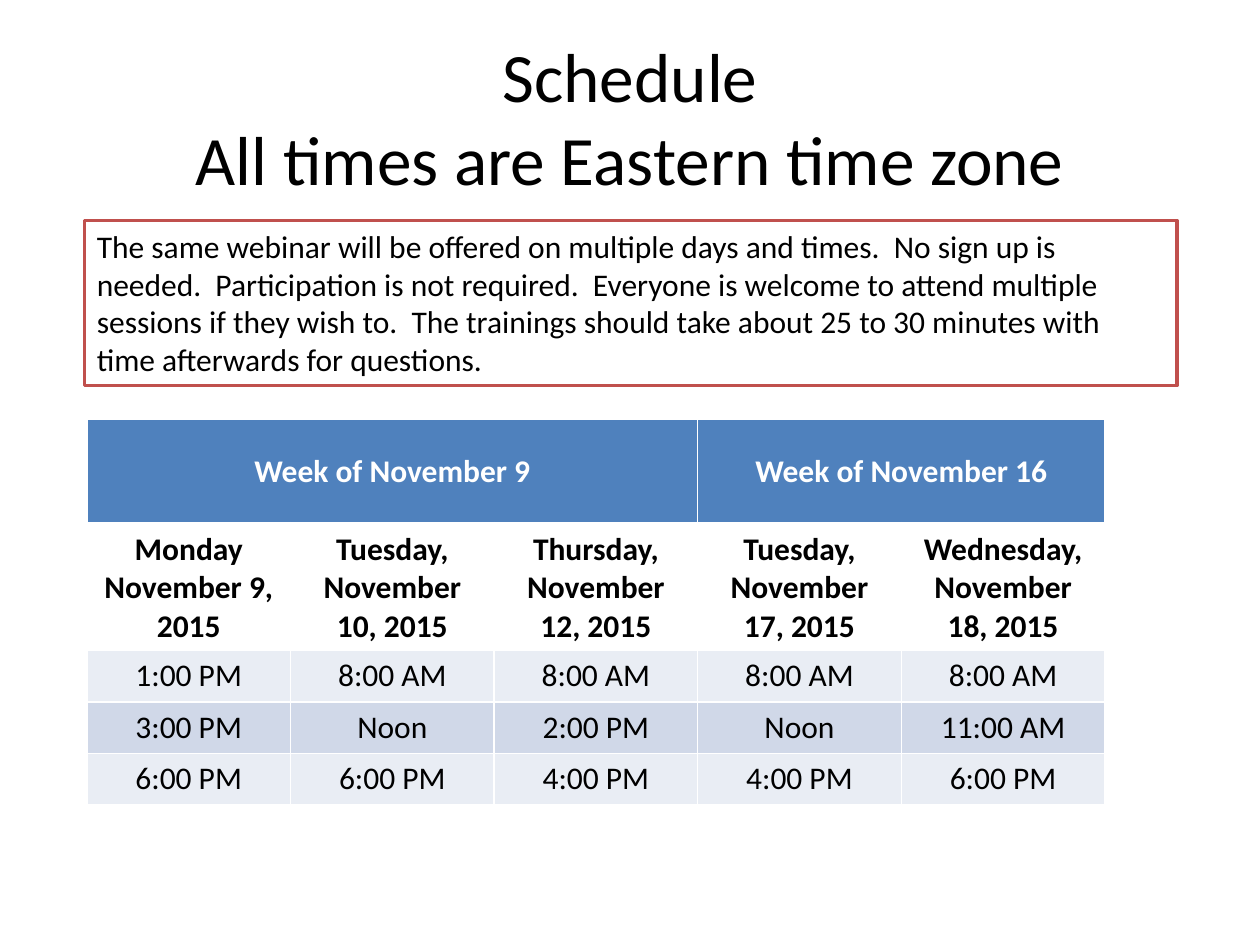
"""Build the training schedule slide."""
from pptx import Presentation
from pptx.dml.color import RGBColor
from pptx.enum.shapes import MSO_SHAPE
from pptx.enum.text import MSO_ANCHOR, PP_ALIGN
from pptx.oxml import parse_xml
from pptx.oxml.ns import nsdecls
from pptx.util import Inches, Pt

FONT = "Calibri"
BLACK, WHITE, BLUE, RED = "000000", "FFFFFF", "4F81BD", "C0504D"
BANDS = ["E9EDF4", "D0D8E8"]

TITLE = "Schedule\vAll times are Eastern time zone"
NOTICE = (
    "The same webinar will be offered on multiple days and times.  No sign up is needed.  "
    "Participation is not required.  Everyone is welcome to attend multiple sessions if "
    "they wish to.  The trainings should take about 25 to 30 minutes with time "
    "afterwards for questions."
)
WEEKS = [("Week of November 9", 3), ("Week of November 16", 2)]
DAYS = [
    "Monday\nNovember 9, 2015",
    "Tuesday,\nNovember 10, 2015",
    "Thursday,\nNovember 12, 2015",
    "Tuesday,\nNovember 17, 2015",
    "Wednesday, November 18, 2015",
]
TIMES = [
    ["1:00 PM", "8:00 AM", "8:00 AM", "8:00 AM", "8:00 AM"],
    ["3:00 PM", "Noon", "2:00 PM", "Noon", "11:00 AM"],
    ["6:00 PM", "6:00 PM", "4:00 PM", "4:00 PM", "6:00 PM"],
]
ROW_HEIGHTS = [0.83, 0.83, 0.41, 0.41, 0.41]


def rgb(value):
    return RGBColor.from_string(value)


def write(frame, text, size=18, color=BLACK, bold=False, align=PP_ALIGN.CENTER):
    frame.text = text
    frame.word_wrap = True
    for paragraph in frame.paragraphs:
        paragraph.alignment = align
        for run in paragraph.runs:
            run.font.name = FONT
            run.font.size = Pt(size)
            run.font.bold = bold
            run.font.color.rgb = rgb(color)


def style_cell(cell, fill=None, bottom=1):
    for side, width in (("L", 1), ("R", 1), ("T", 1), ("B", bottom)):
        cell._tc.get_or_add_tcPr().append(parse_xml(
            f'<a:ln{side} {nsdecls("a")} w="{Pt(width)}"><a:solidFill>'
            f'<a:srgbClr val="{WHITE}"/></a:solidFill></a:ln{side}>'))
    if fill:
        cell.fill.solid()
        cell.fill.fore_color.rgb = rgb(fill)
    else:
        cell.fill.background()


def add_title(slide):
    title = slide.shapes.add_textbox(Inches(0.5), Inches(0.3), Inches(9), Inches(1.25))
    write(title.text_frame, TITLE, size=39.6)
    title.text_frame.vertical_anchor = MSO_ANCHOR.MIDDLE


def add_notice(slide):
    notice = slide.shapes.add_shape(
        MSO_SHAPE.RECTANGLE, Inches(0.67), Inches(1.75), Inches(8.67), Inches(1.31))
    notice.shadow.inherit = False
    notice.fill.solid()
    notice.fill.fore_color.rgb = rgb(WHITE)
    notice.line.color.rgb = rgb(RED)
    notice.line.width = Pt(2)
    write(notice.text_frame, NOTICE, align=PP_ALIGN.LEFT)
    notice.text_frame.vertical_anchor = MSO_ANCHOR.TOP


def add_schedule(slide):
    schedule = slide.shapes.add_table(
        len(ROW_HEIGHTS), len(DAYS), Inches(0.69), Inches(3.33),
        Inches(8.08), Inches(sum(ROW_HEIGHTS))).table
    for row, height in zip(schedule.rows, ROW_HEIGHTS):
        row.height = Inches(height)

    for column in range(len(DAYS)):
        style_cell(schedule.cell(0, column), BLUE, bottom=3)
    first = 0
    for week, span in WEEKS:
        heading = schedule.cell(0, first)
        heading.merge(schedule.cell(0, first + span - 1))
        write(heading.text_frame, week, color=WHITE, bold=True)
        heading.vertical_anchor = MSO_ANCHOR.MIDDLE
        first += span

    for column, day in enumerate(DAYS):
        date = schedule.cell(1, column)
        style_cell(date)
        write(date.text_frame, day, bold=True)

    for index, sessions in enumerate(TIMES):
        for column, time in enumerate(sessions):
            session = schedule.cell(index + 2, column)
            style_cell(session, BANDS[index % 2])
            write(session.text_frame, time)


def main():
    deck = Presentation()
    deck.slide_width, deck.slide_height = Inches(10), Inches(7.5)
    slide = deck.slides.add_slide(deck.slide_layouts[6])
    add_title(slide)
    add_schedule(slide)
    add_notice(slide)
    deck.save("out.pptx")


if __name__ == "__main__":
    main()
